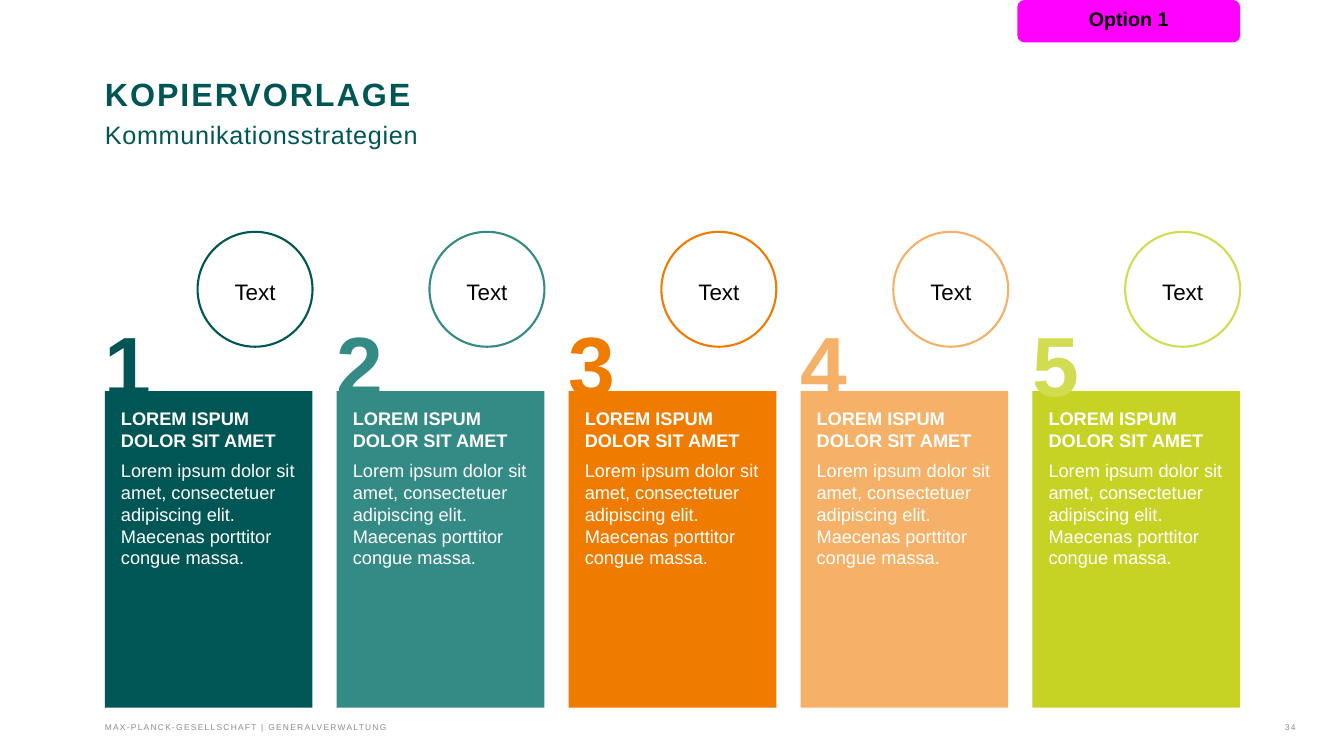
import pptx
import pptx.dml.color
import pptx.enum.shapes
import pptx.enum.text
import pptx.oxml
import pptx.oxml.ns
import pptx.util

Inches = pptx.util.Inches
Pt = pptx.util.Pt
Kind = pptx.enum.shapes.MSO_SHAPE
Align = pptx.enum.text.PP_ALIGN
Anchor = pptx.enum.text.MSO_ANCHOR
Fit = pptx.enum.text.MSO_AUTO_SIZE

TITLE = "KOPIERVORLAGE"
SUBTITLE = "Kommunikationsstrategien"
OPTION = "Option 1"
FOOTER = "MAX-PLANCK-GESELLSCHAFT | GENERALVERWALTUNG\t\t34"
HEAD = "LOREM ISPUM DOLOR SIT AMET"
BODY = ("Lorem ipsum dolor sit amet, consectetuer adipiscing elit. "
        "Maecenas porttitor congue massa.")
LABEL = "Text"
# box colour, accent colour of number and circle
COLUMNS = [
    ("005555", "005555"),
    ("348A85", "348A85"),
    ("EF7C00", "EF7C00"),
    ("F5B167", "F5B167"),
    ("C6D325", "D2DC51"),
]
TABS = [11.22, 11.81]

LEFT, WIDTH = 1.04, 11.26
BOX = 2.06
STEP = (WIDTH - BOX) / (len(COLUMNS) - 1)
RING = 1.14
PAD = 0.16

prs = pptx.Presentation()
prs.slide_width, prs.slide_height = Inches(13.33), Inches(7.5)
slide = prs.slides.add_slide(prs.slide_layouts[5])


def color(code):
    return pptx.dml.color.RGBColor.from_string(code)


def setup(shape, pad=(0, 0, 0, 0), **form):
    """Set the text margins and frame options, and return the first paragraph."""
    frame = shape.text_frame
    sides = ("left", "top", "right", "bottom")
    for side, gap in zip(sides, pad):
        setattr(frame, "margin_" + side, Inches(gap))
    opts = {"word_wrap": True, "auto_size": Fit.NONE,
            "vertical_anchor": Anchor.TOP, **form}
    for name, value in opts.items():
        setattr(frame, name, value)
    return frame.paragraphs[0]


def write(para, text, size, code, bold=False, track=0, **form):
    for name, value in {"alignment": Align.LEFT, **form}.items():
        setattr(para, name, value)
    run = para.add_run()
    run.text = text
    look = {"name": "Arial", "size": Pt(size), "bold": bold}
    for name, value in look.items():
        setattr(run.font, name, value)
    run.font.color.rgb = color(code)
    if track:
        run._r.get_or_add_rPr().set("spc", str(int(track * 100)))


def draw(kind, area, fill, line=None):
    shape = slide.shapes.add_shape(kind, *map(Inches, area))
    shape.shadow.inherit = False
    shape.fill.solid()
    shape.fill.fore_color.rgb = color(fill)
    if line:
        shape.line.color.rgb = color(line)
        shape.line.width = Pt(1.5)
    else:
        shape.line.fill.background()
    return shape


def textbox(*area):
    return slide.shapes.add_textbox(*map(Inches, area))


title = slide.shapes.title
title.left, title.top = Inches(LEFT), Inches(0.76)
title.width, title.height = Inches(WIDTH), Inches(1.54)
para = setup(title)
form = {"line_spacing": Pt(26), "space_after": Pt(18), "space_before": Pt(0)}
write(para, TITLE, 23, "005555", bold=True, track=1.4, **form)
para.add_line_break()
write(para, SUBTITLE, 18, "005555", track=0.5)

tag = draw(Kind.ROUNDED_RECTANGLE, (10.09, 0, 2.21, 0.42), "FF00FF")
para = setup(tag, (PAD, 0.12, PAD, PAD), vertical_anchor=Anchor.MIDDLE)
write(para, OPTION, 14, "000000", bold=True, alignment=Align.CENTER)

foot = textbox(LEFT, 7.06, WIDTH, 0.2)
para = setup(foot, word_wrap=False, vertical_anchor=Anchor.BOTTOM)
stops = pptx.oxml.parse_xml("<a:tabLst %s/>" % pptx.oxml.ns.nsdecls("a"))
for stop in TABS:
    tab = stops.makeelement(pptx.oxml.ns.qn("a:tab"),
                            {"pos": str(Inches(stop)), "algn": "r"})
    stops.append(tab)
para._p.get_or_add_pPr().append(stops)
write(para, FOOTER, 6, "8C8C8C", track=0.9)

for i, (fill, accent) in enumerate(COLUMNS):
    x = LEFT + i * STEP
    box = draw(Kind.RECTANGLE, (x, 3.88, BOX, 3.14), fill)
    para = setup(box, (PAD,) * 4)
    write(para, HEAD, 13, "FFFFFF", bold=True)
    para = box.text_frame.add_paragraph()
    write(para, BODY, 13, "FFFFFF", space_before=Pt(6))

    para = setup(textbox(x, 3.09, 0.77, 1.01), vertical_anchor=Anchor.BOTTOM)
    write(para, str(i + 1), 60, accent, bold=True)

    side = x + BOX - RING
    draw(Kind.OVAL, (side, 2.3, RING, RING), "FFFFFF", accent)
    para = setup(textbox(side, 2.71, RING, 0.32),
                 auto_size=Fit.SHAPE_TO_FIT_TEXT)
    write(para, LABEL, 16, "000000", alignment=Align.CENTER,
          line_spacing=Pt(23))

prs.save("out.pptx")
